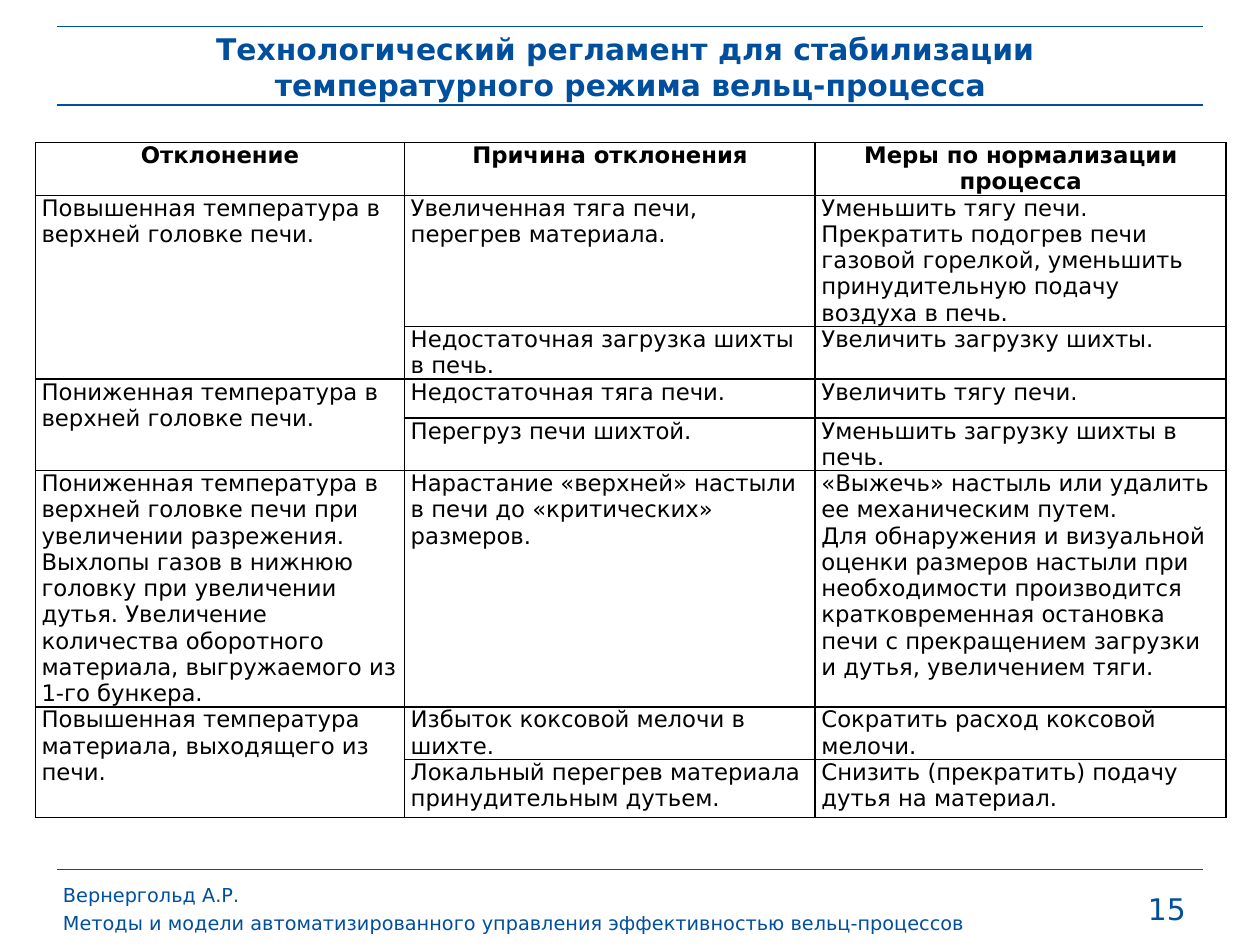
from lxml import etree
from pptx import Presentation
from pptx import util as u
from pptx.dml.color import RGBColor
from pptx.enum import shapes, text
from pptx.oxml import ns

HEX = {"blue": "004F9F", "ink": "000000"}
FONT = "DejaVu Sans"
WIDE, HIGH = 10, 7.5
LEFT, RIGHT = 0.045, 0.955
RULES = (0.028, 0.111, 0.92)
COLS = (2.93, 3.26, 3.26)
ROWS = (0.31, 0.77, 0.31, 0.31, 0.31, 1.69, 0.31, 0.46)

TITLE = "Технологический регламент для стабилизации \vтемпературного режима вельц-процесса"
FOOT = ("Вернергольд А.Р.\n"
        "Методы и модели автоматизированного управления эффективностью вельц-процессов")
HEAD = ("Отклонение", "Причина отклонения", "Меры по нормализации процесса")
# Each deviation with its (cause, remedy) pairs
FAULTS = (
    ("Повышенная температура в верхней головке печи.", (
        ("Увеличенная тяга печи, перегрев материала.",
         "Уменьшить тягу печи. Прекратить подогрев печи газовой горелкой, "
         "уменьшить принудительную подачу воздуха в печь."),
        ("Недостаточная загрузка шихты в печь.", "Увеличить загрузку шихты."))),
    ("Пониженная температура в верхней головке печи.", (
        ("Недостаточная тяга печи.", "Увеличить тягу печи."),
        ("Перегруз печи шихтой.", "Уменьшить загрузку шихты в печь."))),
    ("Пониженная температура в верхней головке печи при увеличении разрежения. "
     "Выхлопы газов в нижнюю головку при увеличении дутья. Увеличение количества "
     "оборотного материала, выгружаемого из 1-го бункера.", (
        ("Нарастание «верхней» настыли в печи до «критических» размеров.",
         "«Выжечь» настыль или удалить ее механическим путем.\n"
         "Для обнаружения и визуальной оценки размеров настыли при необходимости "
         "производится кратковременная остановка печи с прекращением загрузки "
         "и дутья, увеличением тяги."),)),
    ("Повышенная температура материала, выходящего из печи.", (
        ("Избыток коксовой мелочи в шихте.", "Сократить расход коксовой мелочи."),
        ("Локальный перегрев материала принудительным дутьем.",
         "Снизить (прекратить) подачу дутья на материал."))),
)


class Page:
    """Holds the style and the current slide; places are shares of its size."""

    def __init__(self, deck):
        self.slide = deck.slides.add_slide(deck.slide_layouts[5])
        self.items = self.slide.shapes

    def place(self, x, y, w, h):
        return [u.Inches(v * s) for v, s in zip((x, y, w, h), (WIDE, HIGH) * 2)]

    def fill(self, frame, words, size, color="blue", bold=False, align="LEFT", gap=1.0):
        frame.text = words
        look = {"name": FONT, "size": u.Pt(size), "bold": bold}
        for para in frame.paragraphs:
            para.alignment = text.PP_ALIGN[align]
            para.line_spacing = gap
            for run in para.runs:
                for key, val in look.items():
                    setattr(run.font, key, val)
                run.font.color.rgb = RGBColor.from_string(HEX[color])

    def fit(self, frame, pads, anchor="TOP"):
        names = ("left", "top", "right", "bottom")
        form = {"margin_" + n: u.Inches(p) for n, p in zip(names, pads)}
        form.update(word_wrap=True, auto_size=text.MSO_AUTO_SIZE.NONE,
                    vertical_anchor=text.MSO_ANCHOR[anchor])
        for key, val in form.items():
            setattr(frame, key, val)

    def title(self, words, box):
        head = self.items.title
        head.left, head.top, head.width, head.height = self.place(*box)
        self.fit(head.text_frame, (0, 0, 0, 0), "MIDDLE")
        self.fill(head.text_frame, words, 17, bold=True, align="CENTER")

    def label(self, words, box, pads, size, gap=1.0):
        frame = self.items.add_textbox(*self.place(*box)).text_frame
        self.fit(frame, pads)
        self.fill(frame, words, size, gap=gap)

    def rule(self, y):
        x1, y1, x2, y2 = self.place(LEFT, y, RIGHT, y)
        line = self.items.add_connector(shapes.MSO_CONNECTOR.STRAIGHT, x1, y1, x2, y2)
        line.line.color.rgb = RGBColor.from_string(HEX["blue"])
        line.line.width = u.Pt(1)
        etree.SubElement(line._element.spPr, ns.qn("a:effectLst"))

    def cell(self, cell, words, **look):
        cell.margin_left = cell.margin_right = u.Inches(0.05)
        cell.margin_top = cell.margin_bottom = 0
        self.fill(cell.text_frame, words, 13, "ink", **look)
        props = cell._tc.get_or_add_tcPr()
        for side in ("lnL", "lnR", "lnT", "lnB"):
            edge = etree.SubElement(props, ns.qn("a:" + side), w=str(u.Pt(1)))
            tint = etree.SubElement(edge, ns.qn("a:solidFill"))
            etree.SubElement(tint, ns.qn("a:srgbClr"), val=HEX["ink"])
        cell.fill.background()

    def table(self, box):
        shape = self.items.add_table(len(ROWS), len(COLS), *self.place(*box))
        grid = shape.table
        grid.first_row = grid.horz_banding = False
        for col, w in zip(grid.columns, COLS):
            col.width = u.Inches(w)
        for row, h in zip(grid.rows, ROWS):
            row.height = u.Inches(h)
        shape.height = self.place(*box)[3]
        for c, words in enumerate(HEAD):
            self.cell(grid.cell(0, c), words, bold=True, align="CENTER")
        top = 1
        for fault, pairs in FAULTS:
            for r, pair in enumerate(pairs, top):
                for c, words in enumerate((fault if r == top else "", *pair)):
                    self.cell(grid.cell(r, c), words)
            end = top + len(pairs) - 1
            if end > top:
                grid.cell(top, 0).merge(grid.cell(end, 0))
            top = end + 1


def main():
    deck = Presentation()
    deck.slide_width, deck.slide_height = u.Inches(WIDE), u.Inches(HIGH)
    page = Page(deck)
    for y in RULES:
        page.rule(y)
    page.title(TITLE, (0.046, 0.03, 0.909, 0.081))
    page.label(FOOT, (0.046, 0.93, 0.737, 0.064), (0.04, 0, 0.04, 0), 11, 1.2)
    page.label("15", (0.902, 0.937, 0.072, 0.025), (0.09, 0.04, 0.09, 0.04), 17)
    page.table((0.028, 0.151, 0.945, 0.737))
    deck.save("out.pptx")


if __name__ == "__main__":
    main()
